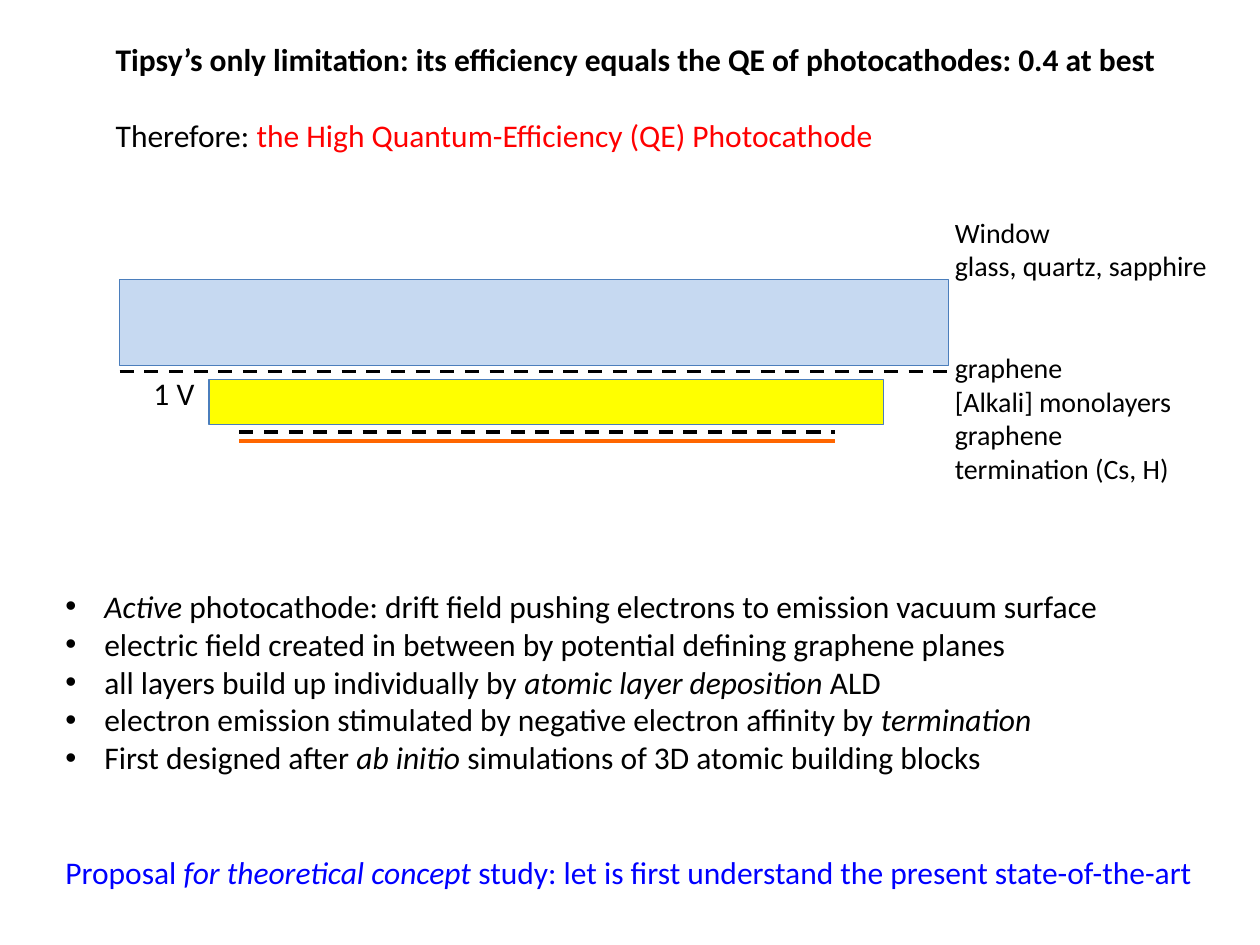
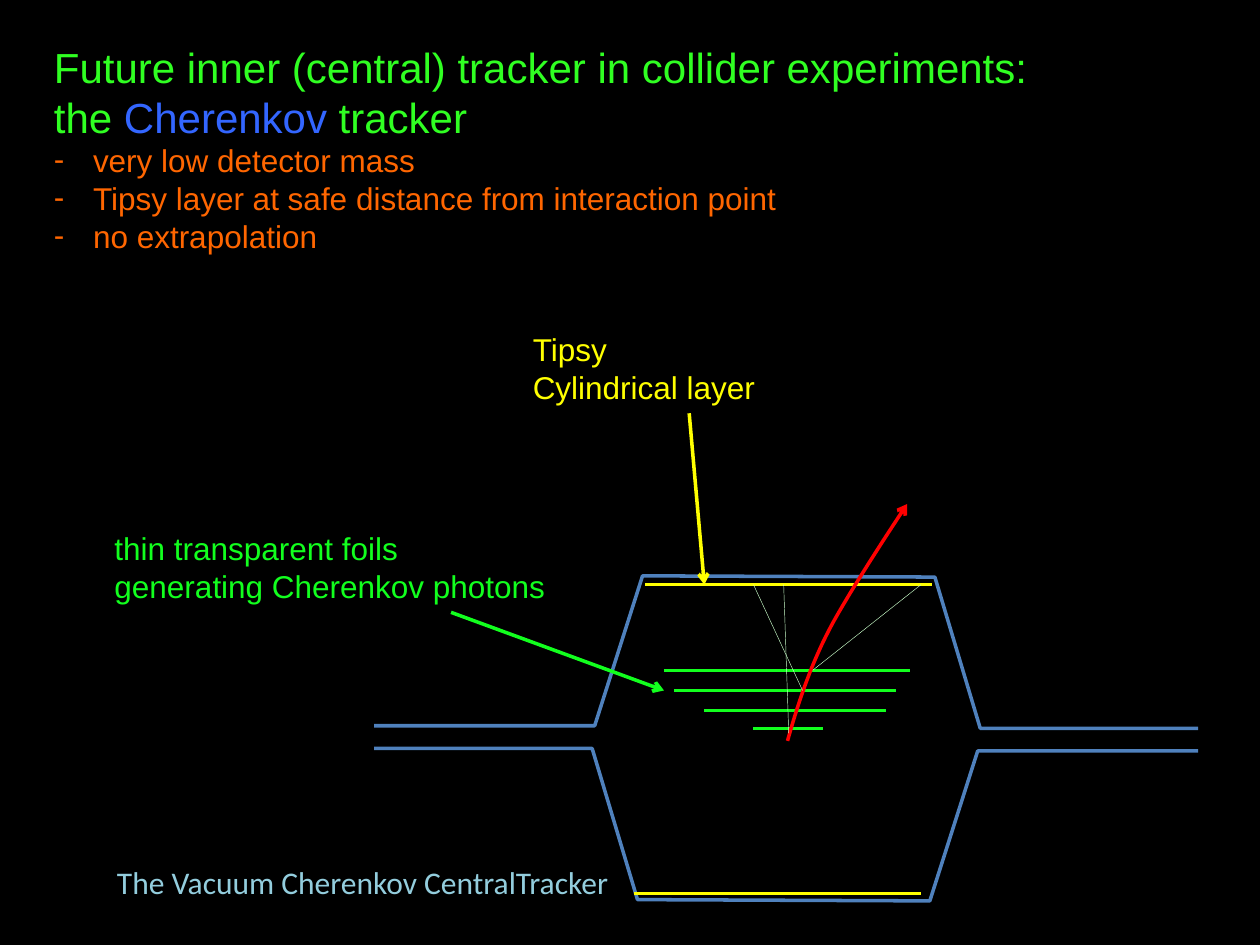
import pptx
import pptx.util
import pptx.dml.color
import pptx.enum.dml
import pptx.enum.shapes
import pptx.enum.text
import pptx.oxml.ns
from lxml import etree

COLUMNS, ROWS = 100, 75
SLIDE_WIDTH, SLIDE_HEIGHT = pptx.util.Inches(10), pptx.util.Inches(7.5)
LINE_SPACING = 1.22
BULLET_INDENT = pptx.util.Inches(0.31)

BLACK, WHITE, RED, YELLOW = "000000", "FFFFFF", "FF0000", "FFFF00"
BLUE, ORANGE = "0000FF", "FF6600"
WINDOW_BLUE, EDGE_BLUE = "C6D9F1", "4B7EBC"
TITLE_GREEN, FOIL_GREEN, PHOTON_GREEN = "30FF22", "12FF1E", "CCFFCC"
CHERENKOV_BLUE, PIPE_BLUE, CAPTION_BLUE = "3366FF", "4F81BD", "93CDDD"


def rgb(color):
    return pptx.dml.color.RGBColor.from_string(color)


def across(columns):
    return round(columns * SLIDE_WIDTH / COLUMNS)


def down(rows):
    return round(rows * SLIDE_HEIGHT / ROWS)


def to_emu(box):
    left, top, width, height = box
    return across(left), down(top), across(width), down(height)


def within(box, left, top, width, height):
    return box[0] + left, box[1] + top, width, height


def shifted(box, points):
    return [(box[0] + x, box[1] + y) for x, y in points]


def add_child(parent, tag, **attributes):
    child = etree.SubElement(parent, pptx.oxml.ns.qn(tag))
    for name, value in attributes.items():
        child.set(name, value)


def style_line(line, color, width, dashed=False, arrow=False):
    line.color.rgb = rgb(color)
    line.width = pptx.util.Pt(width)
    if dashed:
        line.dash_style = pptx.enum.dml.MSO_LINE.DASH
    if arrow:
        add_child(line._get_or_add_ln(), "a:tailEnd", type="arrow")


def write(slide, box, paragraphs, size=18, font="Calibri", color=BLACK,
          bullet=None, bulleted=None, gaps=None):
    frame = slide.shapes.add_textbox(*to_emu(box)).text_frame
    frame.word_wrap = False
    frame.auto_size = pptx.enum.text.MSO_AUTO_SIZE.SHAPE_TO_FIT_TEXT
    bulleted = len(paragraphs) if bulleted is None else bulleted
    for index, runs in enumerate(paragraphs):
        paragraph = frame.add_paragraph() if index else frame.paragraphs[0]
        skipped_lines = (gaps or {}).get(index, 0)
        if skipped_lines:
            paragraph.space_before = pptx.util.Pt(skipped_lines * size * LINE_SPACING)
        if bullet and index < bulleted:
            properties = paragraph._p.get_or_add_pPr()
            properties.set("marL", str(BULLET_INDENT))
            properties.set("indent", str(-BULLET_INDENT))
            add_child(properties, "a:buFont", typeface="Arial")
            add_child(properties, "a:buChar", char=bullet)
        for words, changes in [(runs, {})] if isinstance(runs, str) else runs:
            run = paragraph.add_run()
            run.text = words
            run.font.name = font
            run.font.size = pptx.util.Pt(size)
            run.font.bold = changes.get("bold", False)
            run.font.italic = changes.get("italic", False)
            run.font.color.rgb = rgb(changes.get("color", color))


def draw_line(slide, start, end, color, width=2, **style):
    connector = slide.shapes.add_connector(
        pptx.enum.shapes.MSO_CONNECTOR.STRAIGHT,
        across(start[0]), down(start[1]), across(end[0]), down(end[1]))
    style_line(connector.line, color, width, **style)
    add_child(connector._element.spPr, "a:effectLst")


def draw_level(slide, box, left, right, row, color, **style):
    draw_line(slide, *shifted(box, [(left, row), (right, row)]), color, **style)


def draw_outline(slide, points, color, **style):
    corners = [(across(x), down(y)) for x, y in points]
    builder = slide.shapes.build_freeform(*corners[0])
    builder.add_line_segments(corners[1:], close=False)
    outline = builder.convert_to_shape()
    outline.shadow.inherit = False
    outline.fill.background()
    style_line(outline.line, color, 2, **style)


def draw_slab(slide, box, color):
    slab = slide.shapes.add_shape(
        pptx.enum.shapes.MSO_SHAPE.RECTANGLE, *to_emu(box))
    slab.shadow.inherit = False
    slab.fill.solid()
    slab.fill.fore_color.rgb = rgb(color)
    style_line(slab.line, EDGE_BLUE, 0.75)


def bezier(start, pull_out, pull_in, end, steps=16):
    for step in range(1, steps + 1):
        t = step / steps
        weights = ((1 - t) ** 3, 3 * t * (1 - t) ** 2, 3 * t * t * (1 - t), t ** 3)
        yield tuple(sum(w * p for w, p in zip(weights, axis))
                    for axis in zip(start, pull_out, pull_in, end))


def new_slide(deck, background):
    slide = deck.slides.add_slide(deck.slide_layouts[6])
    slide.background.fill.solid()
    slide.background.fill.fore_color.rgb = rgb(background)
    return slide


def draw_layer_stack(slide, box):
    width = box[2]
    draw_slab(slide, within(box, 7.1, 7.9, 53.5, 3.6), YELLOW)
    draw_level(slide, box, 0, width, 7.3, BLACK, dashed=True)
    draw_slab(slide, within(box, 0, 0, width, 6.8), WINDOW_BLUE)
    draw_level(slide, box, 9.5, 56.8, 12.1, BLACK, dashed=True)
    draw_level(slide, box, 9.5, 56.8, 12.8, ORANGE)
    write(slide, within(box, width - 0.5, -5.6, 22.3, 22.6), [
        "Window", "glass, quartz, sapphire", "graphene",
        "[Alkali] monolayers", "graphene", "termination (Cs, H)",
    ], size=16, gaps={2: 2})
    write(slide, within(box, 1.7, 7, 5.3, 4), ["1 V"])


def build_photocathode_slide(deck):
    slide = new_slide(deck, WHITE)
    italic = {"italic": True}
    write(slide, (8.2, 2.7, 85.7, 10.1), [
        [("Tipsy’s only limitation: its efficiency equals the QE of "
          "photocathodes: 0.4 at best", {"bold": True})],
        [("Therefore: ", {}),
         ("the High Quantum-Efficiency (QE) Photocathode", {"color": RED})],
    ], gaps={1: 1})
    draw_layer_stack(slide, (9.5, 22.2, 65.8, 12.8))
    write(slide, (4.2, 46.1, 92.9, 25.2), [
        [("Active", italic),
         (" photocathode: drift field pushing electrons to emission vacuum surface", {})],
        "electric field created in between by potential defining graphene planes",
        [("all layers build up individually by ", {}),
         ("atomic layer deposition ", italic), ("ALD", {})],
        [("electron emission stimulated by negative electron affinity by ", {}),
         ("termination", italic)],
        [("First designed after ", {}), ("ab initio ", italic),
         ("simulations of 3D atomic building blocks", {})],
        [("Proposal ", {"color": BLUE}),
         ("for theoretical concept ", {"color": BLUE, "italic": True}),
         ("study: let is first understand the present state-of-the-art",
          {"color": BLUE})],
    ], bullet="•", bulleted=5, gaps={5: 2})


def draw_detector(slide, box):
    width, height = box[2:]
    upper_pipe = [(0, 11.9), (17.5, 11.9), (21.3, 0),
                  (44.5, 0.1), (48.1, 12.1), (width, 12.1)]
    lower_pipe = [(width - x, height - y) for x, y in upper_pipe]
    for pipe in (upper_pipe, lower_pipe):
        draw_outline(slide, shifted(box, pipe), PIPE_BLUE)

    for left, right, row in [(30.1, 35.6, 12.1), (26.2, 40.6, 10.7),
                             (23.8, 41.4, 9.1), (23, 42.5, 7.5)]:
        draw_level(slide, box, left, right, row, FOIL_GREEN)

    tipsy_row = 0.7
    for left, row in [(21.5, tipsy_row), (20.6, 25.2)]:
        draw_level(slide, box, left, left + 22.8, row, YELLOW)

    bend = (36.1, 4.3)
    track = [(32.8, 13.1)]
    track += bezier(track[0], (33.6, 10.3), (34.5, 7.4), bend)
    track += bezier(bend, (37.7, 1.2), (42.3, -5.7), (42.3, -5.7))
    draw_outline(slide, shifted(box, track), RED, arrow=True)

    for emission, hit in [((34, 9.1), 30.1), ((34.8, 7.5), 43.4),
                          ((32.9, 12.5), 32.5)]:
        draw_line(slide, *shifted(box, [emission, (hit, tipsy_row)]),
                  PHOTON_GREEN, width=0.25)


def draw_callout(slide, box, lines, color, arrow_column, target):
    write(slide, box, lines, font="Arial", color=color)
    draw_line(slide, *shifted(box, [(arrow_column, box[3]), target]),
              color, arrow=True)


def build_tracker_slide(deck):
    slide = new_slide(deck, BLACK)
    write(slide, (3.3, 2.8, 81, 9.1), [
        "Future inner (central) tracker in collider experiments:",
        [("the ", {}), ("Cherenkov", {"color": CHERENKOV_BLUE}), (" tracker", {})],
    ], size=24, font="Arial", color=TITLE_GREEN)
    draw_detector(slide, (29.7, 45.7, 65.4, 25.8))
    write(slide, (3.3, 10.7, 59.8, 10.1), [
        "very low detector mass",
        "Tipsy layer at safe distance from interaction point",
        "no extrapolation",
    ], font="Arial", color=ORANGE, bullet="-")
    write(slide, (8.3, 68, 42, 4), ["The Vacuum Cherenkov CentralTracker"],
          color=CAPTION_BLUE)
    draw_callout(slide, (8.1, 41.5, 36.5, 7.1),
                 ["thin transparent foils", "generating Cherenkov photons"],
                 FOIL_GREEN, 27.7, (44.6, 13.3))
    draw_callout(slide, (41.3, 25.7, 19.8, 7.1), ["Tipsy", "Cylindrical layer"],
                 YELLOW, 13.4, (14.6, 20.7))


def main():
    deck = pptx.Presentation()
    deck.slide_width, deck.slide_height = SLIDE_WIDTH, SLIDE_HEIGHT
    build_photocathode_slide(deck)
    build_tracker_slide(deck)
    deck.save("out.pptx")


if __name__ == "__main__":
    main()
